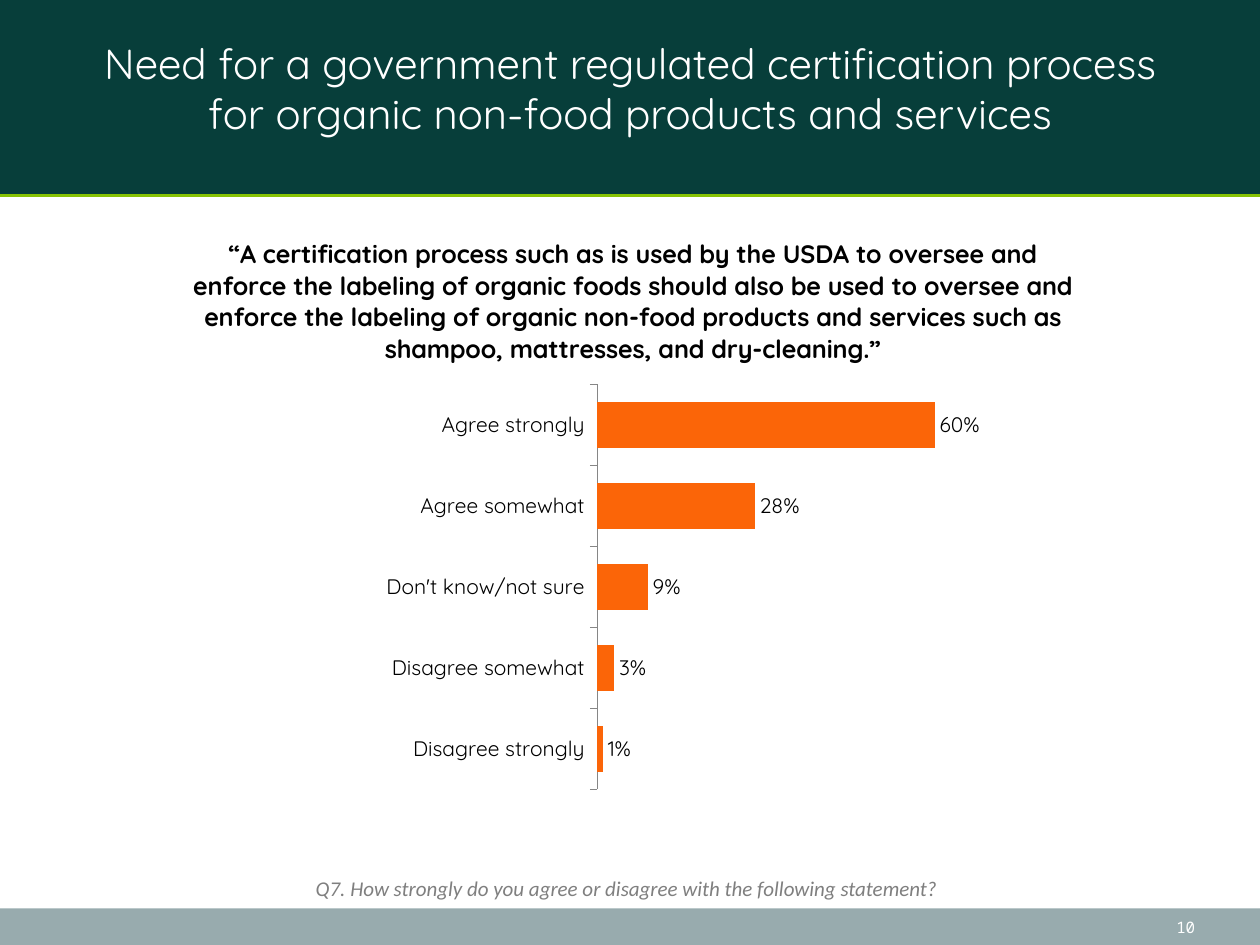
from lxml.etree import SubElement
from pptx import Presentation
from pptx.chart.data import CategoryChartData
from pptx.dml.color import RGBColor
from pptx.enum.chart import XL_CHART_TYPE, XL_LABEL_POSITION, XL_TICK_LABEL_POSITION, XL_TICK_MARK
from pptx.enum.shapes import MSO_CONNECTOR, MSO_SHAPE
from pptx.enum.text import MSO_ANCHOR, PP_ALIGN
from pptx.oxml.ns import qn
from pptx.util import Pt

HEADLINE = ("Need for a government regulated certification process "
            "for organic non-food products and services")
STATEMENT = ("“A\u00a0certification process such as is used by the USDA to oversee and "
             "enforce the labeling of organic foods should also be used to oversee and "
             "enforce the labeling of organic non-food products and services such as "
             "shampoo, mattresses, and dry-cleaning.”")
QUESTION = "Q7. How strongly do you agree or disagree with the following statement?"
PAGE_NUMBER = "10"
ANSWERS = [
    ("Disagree strongly", 0.01),
    ("Disagree somewhat", 0.03),
    ("Don't know/not sure", 0.09),
    ("Agree somewhat", 0.28),
    ("Agree strongly", 0.6),
]

WHITE = RGBColor(0xFF, 0xFF, 0xFF)
BLACK = RGBColor(0, 0, 0)
DARK_GREEN = RGBColor(0x07, 0x3E, 0x3A)
LIME = RGBColor(0x87, 0xC2, 0x05)
SLATE = RGBColor(0x98, 0xAB, 0xAE)
ORANGE = RGBColor(0xFB, 0x65, 0x08)
GREY = RGBColor(0x7F, 0x7F, 0x7F)
AXIS_GREY = RGBColor(0x86, 0x86, 0x86)

WIDTH, HEIGHT = 720, 540
HEADER_HEIGHT = 111.6
FOOTER_TOP = 519.1
FOOTER_HEIGHT = HEIGHT - FOOTER_TOP


def add_band(slide, top, height, color):
    band = slide.shapes.add_shape(MSO_SHAPE.RECTANGLE, 0, Pt(top), Pt(WIDTH), Pt(height))
    band.shadow.inherit = False
    band.fill.solid()
    band.fill.fore_color.rgb = color
    band.line.fill.background()


def style_font(font, name, size, color, bold=False, italic=False):
    font.name = name
    font.size = Pt(size)
    font.color.rgb = color
    font.bold = bold
    font.italic = italic


def add_text(slide, text, box, align, font_name, size, color, italic=False):
    frame = slide.shapes.add_textbox(*map(Pt, box)).text_frame
    frame.word_wrap = True
    frame.vertical_anchor = MSO_ANCHOR.MIDDLE
    paragraph = frame.paragraphs[0]
    paragraph.text = text
    paragraph.alignment = align
    style_font(paragraph.font, font_name, size, color, italic=italic)


def place(part, index, **settings):
    for old in part.findall(qn("c:layout")):
        part.remove(old)
    layout = SubElement(part, qn("c:layout"))
    manual = SubElement(layout, qn("c:manualLayout"))
    for tag, value in settings.items():
        SubElement(manual, qn(f"c:{tag}")).set("val", str(value))
    part.insert(index, layout)


def add_answer_chart(slide):
    data = CategoryChartData(number_format="0%")
    data.categories = [answer for answer, _ in ANSWERS]
    data.add_series("Series 1", [share for _, share in ANSWERS])
    chart = slide.shapes.add_chart(
        XL_CHART_TYPE.BAR_CLUSTERED, Pt(36.7), Pt(118.1), Pt(646.6), Pt(354.2), data).chart
    style_font(chart.font, "Quicksand", 12, BLACK)
    chart.has_legend = False

    chart.has_title = True
    statement = chart.chart_title.text_frame.paragraphs[0]
    statement.text = STATEMENT
    statement.alignment = PP_ALIGN.CENTER
    style_font(statement.font, "Quicksand", 14.4, BLACK, bold=True)
    place(chart.chart_title.element, 1, xMode="edge", yMode="edge", x=0.11, y=0.04)
    place(chart.element.find(".//" + qn("c:plotArea")), 0, layoutTarget="inner",
          xMode="edge", yMode="edge", x=0.471, y=0.287, w=0.497, h=0.653)

    shares = chart.value_axis
    shares.minimum_scale, shares.maximum_scale, shares.major_unit = 0, 1, 0.2
    shares.has_major_gridlines = False
    shares.visible = False
    answers = chart.category_axis
    answers.major_tick_mark = XL_TICK_MARK.OUTSIDE
    answers.tick_label_position = XL_TICK_LABEL_POSITION.LOW
    answers.format.line.color.rgb = AXIS_GREY
    answers.format.line.width = Pt(0.75)

    plot = chart.plots[0]
    plot.gap_width = 75
    plot.vary_by_categories = False
    plot.has_data_labels = True
    labels = plot.data_labels
    labels.show_value = True
    labels.number_format = "0%"
    labels.number_format_is_linked = False
    labels.position = XL_LABEL_POSITION.OUTSIDE_END
    bars = plot.series[0].format.fill
    bars.solid()
    bars.fore_color.rgb = ORANGE


def main():
    deck = Presentation()
    deck.slide_width, deck.slide_height = Pt(WIDTH), Pt(HEIGHT)
    slide = deck.slides.add_slide(deck.slide_layouts[6])

    add_band(slide, FOOTER_TOP, FOOTER_HEIGHT, SLATE)
    add_band(slide, 0, HEADER_HEIGHT, DARK_GREEN)
    rule = slide.shapes.add_connector(
        MSO_CONNECTOR.STRAIGHT, 0, Pt(HEADER_HEIGHT), Pt(WIDTH), Pt(HEADER_HEIGHT))
    rule.line.color.rgb = LIME
    rule.line.width = Pt(2)
    SubElement(rule.element.spPr, qn("a:effectLst"))

    add_text(slide, PAGE_NUMBER, (522, FOOTER_TOP, 168, FOOTER_HEIGHT),
             PP_ALIGN.RIGHT, "Noto Sans Mono", 9, WHITE)
    add_text(slide, HEADLINE, (36, -10.8, 648, 121.7),
             PP_ALIGN.CENTER, "Quicksand", 24, WHITE)
    add_answer_chart(slide)
    add_text(slide, QUESTION, (51.8, 496.8, 612.7, 21.6),
             PP_ALIGN.CENTER, "Calibri", 12, GREY, italic=True)

    deck.save("out.pptx")


if __name__ == "__main__":
    main()
